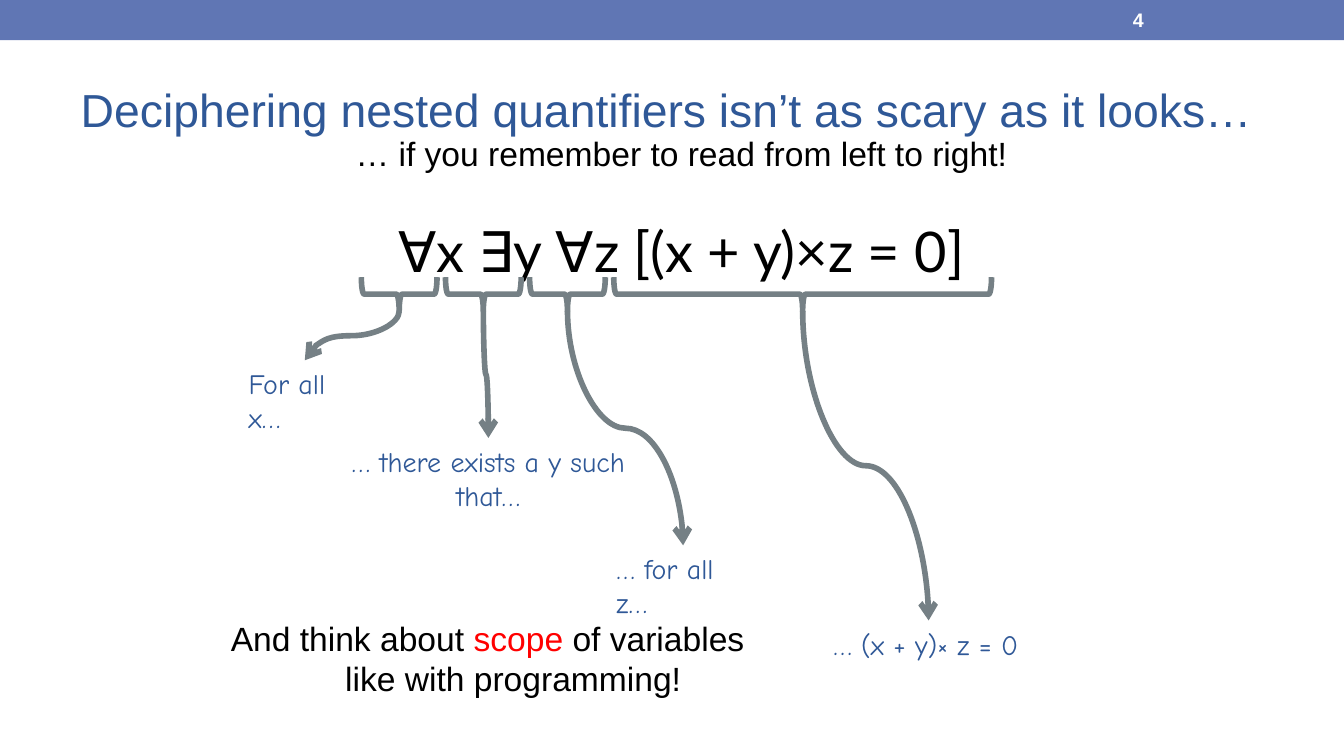
from lxml import etree
from pptx import Presentation
from pptx.dml.color import RGBColor
from pptx.enum.shapes import MSO_CONNECTOR, MSO_SHAPE
from pptx.enum.text import MSO_ANCHOR, MSO_AUTO_SIZE, PP_ALIGN
from pptx.oxml.ns import qn
from pptx.util import Cm, Pt

LEFT, CENTER = PP_ALIGN.LEFT, PP_ALIGN.CENTER
TOP, MIDDLE = MSO_ANCHOR.TOP, MSO_ANCHOR.MIDDLE
BLACK, WHITE, RED = "000000", "FFFFFF", "FF0000"
BLUE, BAND, GRAY = "2F5897", "6076B4", "758085"

# Content
TITLE = "Deciphering nested quantifiers isn’t as scary as it looks…"
SUBTITLE = "… if you remember to read from left to right!"
FORMULA = "∀x ∃y ∀z [(x + y)×z = 0]"
SCOPE_NOTE = [("And think about ", BLACK), ("scope", RED),
              (" of variables like with programming!", BLACK)]
PAGE = "4"
# Reading, brace width, then label centre, top, width and height (cm)
READINGS = [
    ("For all x…", 1.43, 5.76, 6.81, 2.62, 0.89, LEFT),
    ("… there exists a y such that…", 1.43, 9.23, 8.28, 6.32, 1.55, CENTER),
    ("… for all z…", 1.43, 12.91, 10.31, 3.02, 0.89, LEFT),
    ("… (x + y)× z = 0", 7.14, 17.55, 11.73, 4.1, 0.89, LEFT),
]
BRACE_START, BRACE_GAP, BRACE_HEIGHT, BRACE_MIDDLE = 6.83, 0.16, 0.64, 5.56
BRACE_BOTTOM = BRACE_MIDDLE + BRACE_HEIGHT / 2


def rgb(value):
    return RGBColor.from_string(value)


def place(shape, left, top, width, height):
    shape.left, shape.top = Cm(left), Cm(top)
    shape.width, shape.height = Cm(width), Cm(height)


def write(shape, pieces, font, size, align=LEFT, anchor=TOP, bold=False):
    """Fill a shape with one paragraph of (text, colour) pieces."""
    frame = shape.text_frame
    frame.word_wrap, frame.auto_size = True, MSO_AUTO_SIZE.NONE
    frame.vertical_anchor = anchor
    paragraph = frame.paragraphs[0]
    paragraph.alignment = align
    for text, color in pieces:
        run = paragraph.add_run()
        run.text = text
        run.font.name, run.font.size, run.font.bold = font, Pt(size), bold
        run.font.color.rgb = rgb(color)
    return paragraph


def add_text(box, *args, **kwargs):
    shape = slide.shapes.add_textbox(*map(Cm, box))
    return shape, write(shape, *args, **kwargs)


def hang(paragraph, margin, indent):
    properties = paragraph._p.get_or_add_pPr()
    properties.set("marL", str(Cm(margin)))
    properties.set("indent", str(Cm(indent)))
    etree.SubElement(properties, qn("a:buNone"))


def outline(shape):
    shape.line.color.rgb = rgb(GRAY)
    shape.line.width = Pt(3)


def add_brace(center, span):
    brace = slide.shapes.add_shape(MSO_SHAPE.LEFT_BRACE, 0, 0, 0, 0)
    place(brace, center - BRACE_HEIGHT / 2, BRACE_MIDDLE - span / 2,
          BRACE_HEIGHT, span)
    brace.rotation = 270
    brace.shadow.inherit = False
    brace.fill.background()
    outline(brace)


def add_arrow(label_x, label_y, brace_x):
    """Curve that leaves both ends vertically: a curve turned by 270 degrees."""
    length, shift = label_y - BRACE_BOTTOM, abs(label_x - brace_x)
    left = (label_x + brace_x - length) / 2
    top = (label_y + BRACE_BOTTOM - shift) / 2
    arrow = slide.shapes.add_connector(
        MSO_CONNECTOR.CURVE, Cm(left), Cm(top), Cm(left + length), Cm(top + shift))
    outline(arrow)
    properties = arrow._element.spPr
    properties.xfrm.set("rot", str(270 * 60000))
    if label_x > brace_x:
        properties.xfrm.set("flipV", "1")
    etree.SubElement(properties.find(qn("a:ln")), qn("a:headEnd"), type="arrow")
    etree.SubElement(properties, qn("a:effectLst"))


prs = Presentation()
prs.slide_width, prs.slide_height = Cm(25.4), Cm(14.29)
slide = prs.slides.add_slide(prs.slide_layouts[1])
title, subtitle = slide.placeholders

# Top band and page number
band = slide.shapes.add_shape(MSO_SHAPE.RECTANGLE, 0, 0, prs.slide_width, Cm(0.76))
band.shadow.inherit = False
band.fill.solid()
band.fill.fore_color.rgb = rgb(BAND)
band.line.fill.background()
add_text((21.16, 0.03, 2.97, 0.69), [(PAGE, WHITE)], "Arial", 10.5,
         anchor=MIDDLE, bold=True)

# Title and subtitle
place(title, 1.27, 1.12, 22.86, 2.06)
write(title, [(TITLE, BLUE)], "Arial", 24.8, anchor=MIDDLE).line_spacing = 0.8
place(subtitle, 4.6, 2.39, 16.2, 1.42)
line = write(subtitle, [(SUBTITLE, BLACK)], "Arial", 18, CENTER)
line.space_before = Pt(3.6)
hang(line, 1.27, -0.91)

# Formula
add_text((4.78, 3.96, 16.2, 1.75), [(FORMULA, BLACK)], "Lato", 30, CENTER)

# Braces under the formula, each with an arrow to its reading
brace_left = BRACE_START
for reading, span, label_x, label_y, width, height, align in READINGS:
    brace_x = brace_left + span / 2
    add_brace(brace_x, span)
    add_text((label_x - width / 2, label_y, width, height), [(reading, BLUE)],
             "Comic Neue", 15, align)
    add_arrow(label_x, label_y, brace_x)
    brace_left += span + BRACE_GAP

# Note on scope
note, line = add_text((4.06, 11.58, 10.31, 1.91), SCOPE_NOTE, "Arial", 18, CENTER)
note.text_frame.margin_left = note.text_frame.margin_right = Cm(0.18)
note.text_frame.margin_top = note.text_frame.margin_bottom = Cm(0.1)
line.space_before = Pt(3.6)
hang(line, 0.97, -0.97)

prs.save("out.pptx")
